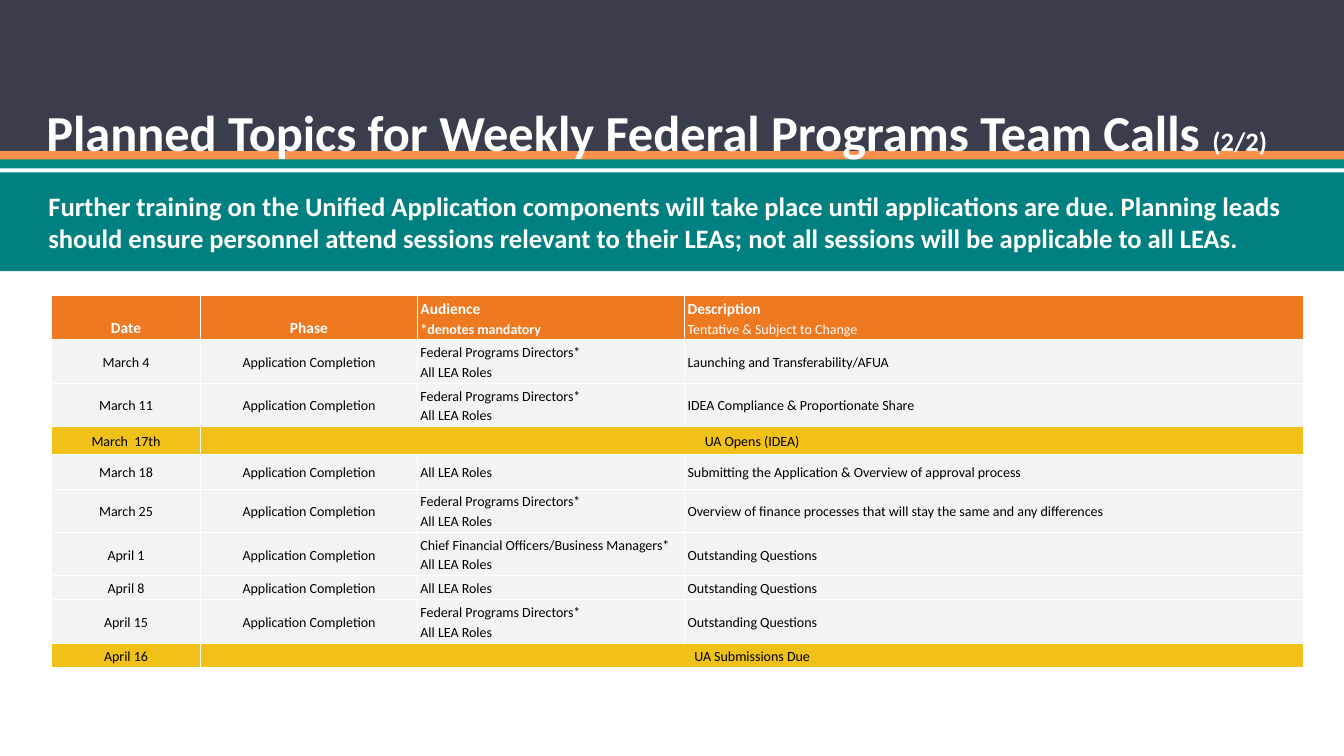
from lxml import etree
from pptx import Presentation
from pptx import util as u
from pptx.dml.color import RGBColor
from pptx.enum import shapes, text
from pptx.oxml.ns import qn

# Content
FONT = "Calibri"
WHITE, BLACK, ORANGE, GRAY, GOLD = "FFFFFF", "000000", "EF7920", "F3F3F3", "EFC119"
TITLE = [("Planned Topics for Weekly Federal Programs Team Calls ", 36), ("(2/2)", 19)]
BANNER = ("Further training on the Unified Application components will take place until "
          "applications are due. Planning leads should ensure personnel attend sessions "
          "relevant to their LEAs; not all sessions will be applicable to all LEAs.")
BANDS = [  # top, height, colour
    (0, 1.5, "3A3D4B"),
    (1.5, 0.09, "FF914D"),
    (1.58, 0.09, "048A81"),
]
PHASE = "Application Completion"
ALL_ROLES = "All LEA Roles"
DIRECTORS = "Federal Programs Directors*\n" + ALL_ROLES
MANAGERS = "Chief Financial Officers/Business Managers*\n" + ALL_ROLES
QUESTIONS = "Outstanding Questions"
HEADER = ["Date", "Phase", "Audience\n*denotes mandatory",
          "Description\nTentative & Subject to Change"]
SCHEDULE = [  # row height, cells; two cells make a milestone row
    (0.43, ["March 4", PHASE, DIRECTORS, "Launching and Transferability/AFUA"]),
    (0.43, ["March 11", PHASE, DIRECTORS, "IDEA Compliance & Proportionate Share"]),
    (0.28, ["March  17th", "UA Opens (IDEA)"]),
    (0.34, ["March 18", PHASE, ALL_ROLES,
            "Submitting the Application & Overview of approval process"]),
    (0.43, ["March 25", PHASE, DIRECTORS,
            "Overview of finance processes that will stay the same and any differences"]),
    (0.43, ["April 1", PHASE, MANAGERS, QUESTIONS]),
    (0.24, ["April 8", PHASE, ALL_ROLES, QUESTIONS]),
    (0.43, ["April 15", PHASE, DIRECTORS, QUESTIONS]),
    (0.24, ["April 16", "UA Submissions Due"]),
]
ROWS = [(0.44, HEADER)] + SCHEDULE
COLUMN_WIDTHS = [1.48, 2.15, 2.65, 6.14]


def color(value):
    return RGBColor.from_string(value)


def style(span, size, ink, bold=False):
    span.font.name = FONT
    span.font.size = u.Pt(size)
    span.font.bold = bold
    span.font.color.rgb = color(ink)


def set_margins(target, across, down):
    target.margin_left = target.margin_right = u.Inches(across)
    target.margin_top = target.margin_bottom = u.Inches(down)


def add_band(top, height, fill):
    band = page.shapes.add_shape(shapes.MSO_SHAPE.RECTANGLE, 0, u.Inches(top),
                                 deck.slide_width, u.Inches(height))
    band.shadow.inherit = False
    band.fill.solid()
    band.fill.fore_color.rgb = color(fill)
    band.line.fill.background()
    return band


def add_borders(cell):
    properties = cell._tc.get_or_add_tcPr()
    for position, side in enumerate(("lnL", "lnR", "lnT", "lnB")):
        line = etree.Element(qn("a:" + side), w=str(u.Pt(0.75)))
        fill = etree.SubElement(line, qn("a:solidFill"))
        etree.SubElement(fill, qn("a:srgbClr"), val=WHITE)
        properties.insert(position, line)


def fill_cell(cell, words, column, fill, is_header, anchor):
    cell.fill.solid()
    cell.fill.fore_color.rgb = color(fill)
    add_borders(cell)
    set_margins(cell, 0.03, 0.02)
    cell.vertical_anchor = anchor
    cell.text_frame.text = words
    for number, para in enumerate(cell.text_frame.paragraphs):
        para.line_spacing = 1.15
        para.alignment = text.PP_ALIGN.CENTER if column < 2 else text.PP_ALIGN.LEFT
        size = 11 if is_header and number == 0 else 10
        bold = is_header and not para.text.startswith("Tentative")
        style(para.runs[0], size, WHITE if is_header else BLACK, bold)


deck = Presentation()
deck.slide_width, deck.slide_height = u.Inches(13.33), u.Inches(7.5)
page = deck.slides.add_slide(deck.slide_layouts[6])

# Header bands and title
for band_data in BANDS:
    add_band(*band_data)
title = page.shapes.add_textbox(u.Inches(0.33), u.Inches(0.63), u.Inches(12.42), u.Inches(0.83))
title.text_frame.word_wrap = True
set_margins(title.text_frame, 0.13, 0.13)
title_para = title.text_frame.paragraphs[0]
title_para.line_spacing = 1.4
for words, size in TITLE:
    span = title_para.add_run()
    span.text = words
    style(span, size, WHITE, True)

# Schedule table
frame = page.shapes.add_table(len(ROWS), len(COLUMN_WIDTHS), u.Inches(0.51), u.Inches(2.93),
                              u.Inches(sum(COLUMN_WIDTHS)),
                              u.Inches(sum(height for height, _ in ROWS)))
table = frame.table
for column, width in enumerate(COLUMN_WIDTHS):
    table.columns[column].width = u.Inches(width)
for row, (height, cells) in enumerate(ROWS):
    table.rows[row].height = u.Inches(height)
    is_header, is_milestone = row == 0, len(cells) == 2
    fill = ORANGE if is_header else GOLD if is_milestone else GRAY
    at_edge = row in (0, len(ROWS) - 1)
    anchor = text.MSO_ANCHOR.BOTTOM if at_edge else text.MSO_ANCHOR.MIDDLE
    if is_milestone:
        table.cell(row, 1).merge(table.cell(row, 3))
    for column, words in enumerate(cells):
        fill_cell(table.cell(row, column), words, column, fill, is_header, anchor)

# Training banner
banner = add_band(1.71, 0.98, "008080")
banner_text = banner.text_frame
banner_text.word_wrap = True
set_margins(banner_text, 0.1, 0.1)
banner_text.margin_left = u.Inches(0.48)
banner_text.vertical_anchor = text.MSO_ANCHOR.MIDDLE
banner_text.text = BANNER
banner_text.paragraphs[0].alignment = text.PP_ALIGN.LEFT
style(banner_text.paragraphs[0].runs[0], 19, WHITE, True)

deck.save("out.pptx")
